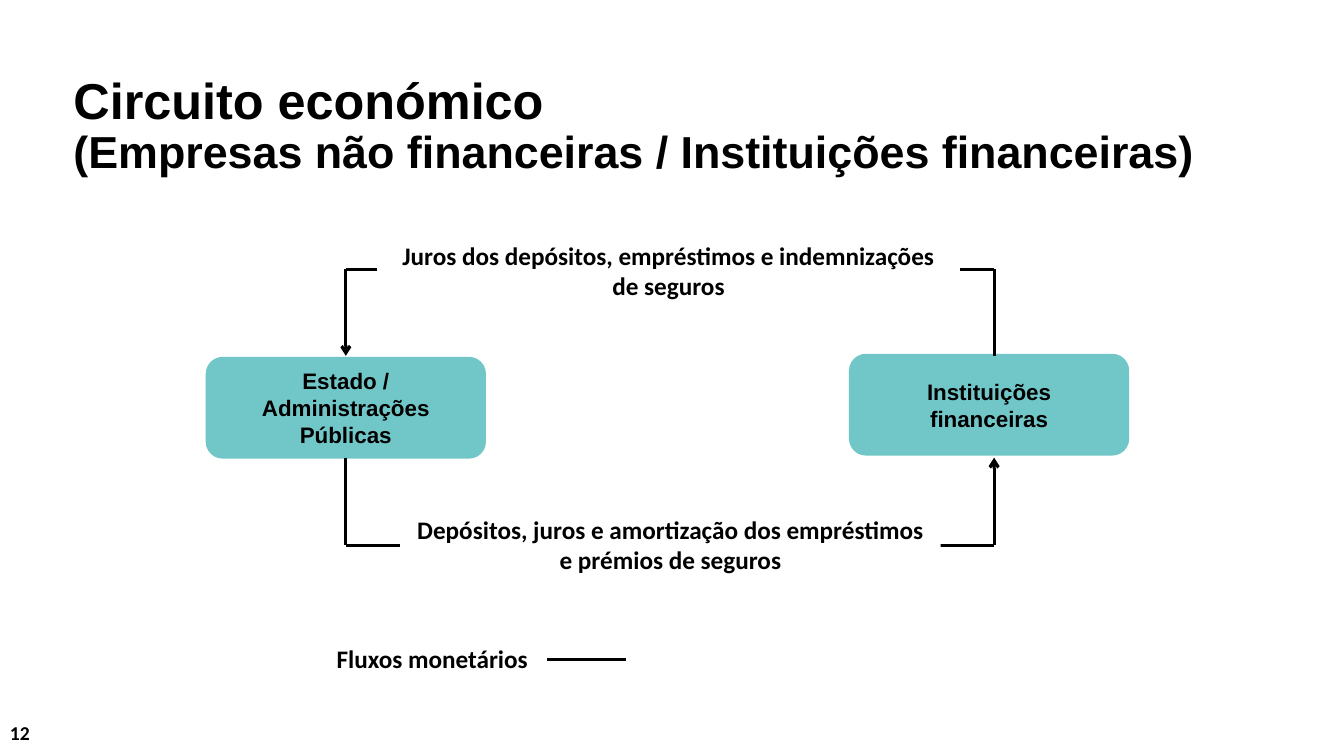
from lxml.etree import SubElement
from pptx import Presentation
from pptx.dml.color import RGBColor
from pptx.enum.shapes import MSO_CONNECTOR as LINK, MSO_SHAPE as SHAPE
from pptx.enum.text import MSO_ANCHOR as ANCHOR, PP_ALIGN as ALIGN
from pptx.oxml.ns import qn
from pptx.util import Inches, Pt

BLACK = RGBColor(0, 0, 0)
WHITE = RGBColor(255, 255, 255)
TEAL = RGBColor(0x71, 0xC6, 0xC8)

TITLE = [("Circuito económico", 36),
         ("(Empresas não financeiras / Instituições financeiras)", 32)]
NUMBER = "12"
SECTORS = [
    (["Estado / Administrações Públicas"], 2.04, 3.54),
    (["Instituições", "financeiras"], 8.42, 3.51),
]
FLOWS = [
    ("Juros dos depósitos, empréstimos e indemnizações de seguros", 3.74, 2.33, 5.78),
    ("Depósitos, juros e amortização dos empréstimos e prémios de seguros", 3.97, 5.05, 5.36),
]
LEGEND = "Fluxos monetários"
LEFT, RIGHT = 3.43, 9.86
TOP, LOW = 2.67, 5.41
ROOF, FLOOR = 3.53, 4.54
LINKS = [
    (LEFT, TOP, RIGHT, TOP, None),
    (LEFT, TOP, LEFT, ROOF, "tailEnd"),
    (RIGHT, TOP, RIGHT, ROOF, None),
    (LEFT, LOW, RIGHT, LOW, None),
    (LEFT, FLOOR, LEFT, LOW, None),
    (RIGHT, FLOOR, RIGHT, LOW, "headEnd"),
]


def style(font, name, size):
    look = {"name": name, "size": Pt(size), "bold": True}
    for key, value in look.items():
        setattr(font, key, value)
    font.color.rgb = BLACK


def write(shape, lines, name, size, align, anchor=ANCHOR.TOP):
    frame = shape.text_frame
    frame.word_wrap = True
    frame.vertical_anchor = anchor
    frame.text = "\n".join(lines)
    for par in frame.paragraphs:
        par.alignment = align
        style(par.runs[0].font, name, size)


def block(kind, fill, *box):
    shape = slide.shapes.add_shape(kind, *map(Inches, box))
    shape.shadow.inherit = False
    shape.fill.solid()
    shape.fill.fore_color.rgb = fill
    shape.line.fill.background()
    return shape


def link(x1, y1, x2, y2, arrow=None):
    wire = slide.shapes.add_connector(LINK.STRAIGHT, *map(Inches, (x1, y1, x2, y2)))
    wire.line.color.rgb = BLACK
    wire.line.width = Pt(2.25)
    if arrow:
        SubElement(wire.line._get_or_add_ln(), qn("a:" + arrow), type="arrow")
    SubElement(wire._element.spPr, qn("a:effectLst"))


deck = Presentation()
deck.slide_width, deck.slide_height = Inches(13.33), Inches(7.5)
slide = deck.slides.add_slide(deck.slide_layouts[6])

number = slide.shapes.add_textbox(*map(Inches, (0, 7.1, 3, 0.4)))
write(number, [NUMBER], "Calibri", 14, ALIGN.LEFT)

title = slide.shapes.add_textbox(*map(Inches, (0.63, 0.7, 12.24, 1.32)))
title.text_frame.word_wrap = True
head = title.text_frame.paragraphs[0]
head.line_spacing = 0.9
for i, (text, size) in enumerate(TITLE):
    if i:
        head.add_line_break()
    run = head.add_run()
    run.text = text
    style(run.font, "Arial", size)

for lines, x, y in SECTORS:
    sector = block(SHAPE.ROUNDED_RECTANGLE, TEAL, x, y, 2.78, 1.01)
    write(sector, lines, "Arial", 16, ALIGN.CENTER, ANCHOR.MIDDLE)

for ends in LINKS:
    link(*ends)

for text, x, y, w in FLOWS:
    flow = block(SHAPE.RECTANGLE, WHITE, x, y, w, 0.71)
    write(flow, [text], "Calibri", 18, ALIGN.CENTER)

legend = block(SHAPE.RECTANGLE, WHITE, 3.24, 6.33, 2.28, 0.4)
write(legend, [LEGEND], "Calibri", 18, ALIGN.LEFT)
link(5.43, 6.54, 6.21, 6.54)

deck.save("out.pptx")
